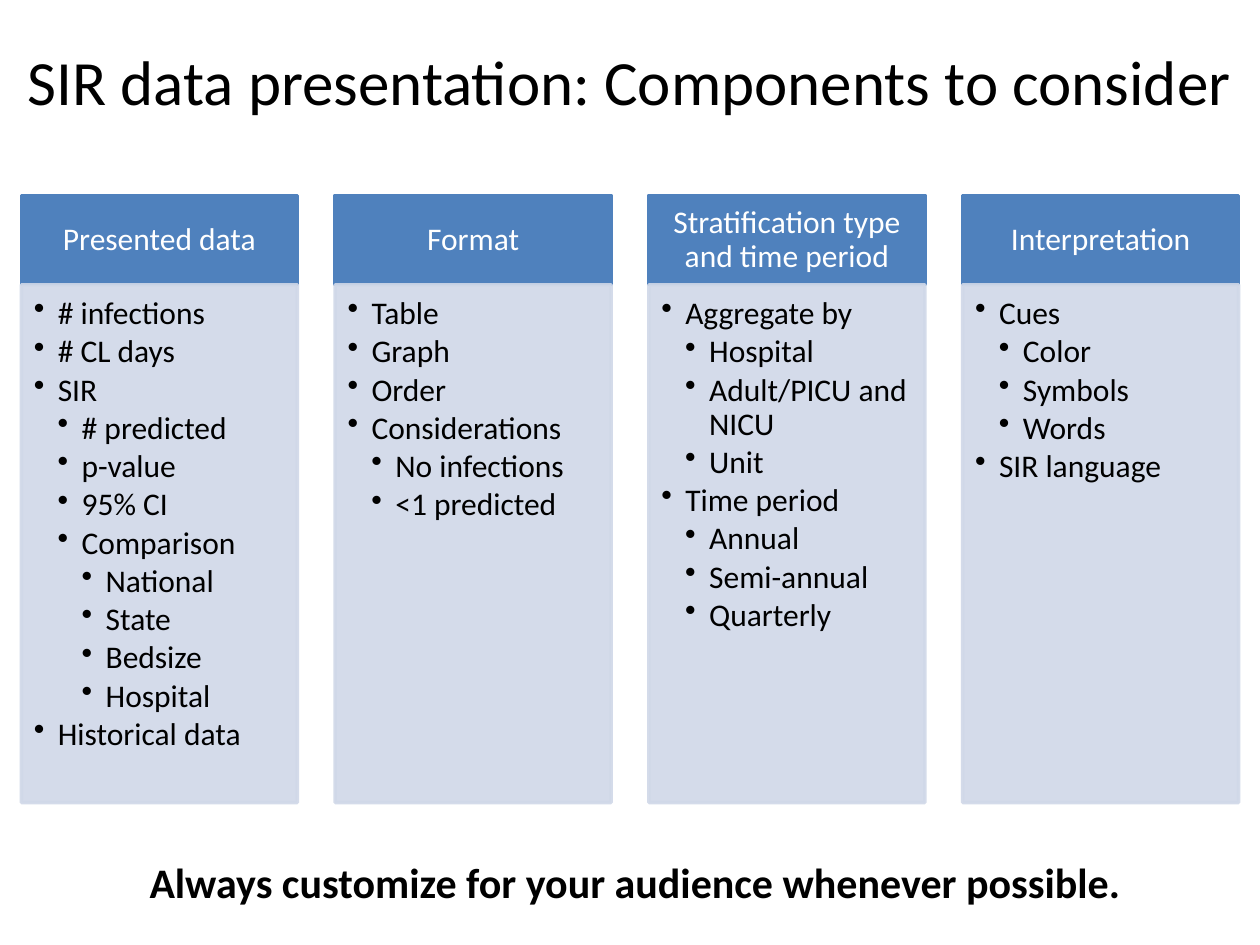
"""Build a slide that lists the components of an SIR data presentation."""
from lxml import etree
from pptx import Presentation
from pptx import util as u
from pptx.dml.color import RGBColor
from pptx.enum import shapes, text
from pptx.oxml.ns import qn

COLORS = {"header": "4F81BD", "body": "D0D8E8", "dark": "000000", "light": "FFFFFF"}
FONT = "Calibri"
LEFT, TOP, PITCH, WIDTH = 0.17, 1.55, 2.49, 2.19
HEADER_HEIGHT, BODY_HEIGHT = 0.71, 4.11
INDENT = 0.19
COLUMNS = [
    ("Presented data", [
        (0, "# infections"), (0, "# CL days"), (0, "SIR"),
        (1, "# predicted"), (1, "p-value"), (1, "95% CI"), (1, "Comparison"),
        (2, "National"), (2, "State"), (2, "Bedsize"), (2, "Hospital"),
        (0, "Historical data")]),
    ("Format", [
        (0, "Table"), (0, "Graph"), (0, "Order"), (0, "Considerations"),
        (1, "No infections"), (1, "<1 predicted")]),
    ("Stratification type and time period", [
        (0, "Aggregate by"), (1, "Hospital"), (1, "Adult/PICU and NICU"), (1, "Unit"),
        (0, "Time period"), (1, "Annual"), (1, "Semi-annual"), (1, "Quarterly")]),
    ("Interpretation", [
        (0, "Cues"), (1, "Color"), (1, "Symbols"), (1, "Words"),
        (0, "SIR language")]),
]


def write(paragraph, words, size=18, color="dark", bold=False,
          align=text.PP_ALIGN.CENTER, line_spacing=None, space_after=None):
    """Put formatted words into a paragraph."""
    run = paragraph.add_run()
    run.text = words
    run.font.name, run.font.size, run.font.bold = FONT, u.Pt(size), bold
    run.font.color.rgb = RGBColor.from_string(COLORS[color])
    paragraph.alignment = align
    if line_spacing:
        paragraph.line_spacing = line_spacing
    if space_after is not None:
        paragraph.space_after = u.Pt(space_after)


def set_bullet(paragraph, depth):
    """Give a paragraph a hanging bullet at the given depth."""
    paragraph.level = depth + 1
    properties = paragraph._p.get_or_add_pPr()
    properties.set("marL", str(u.Inches(INDENT * (depth + 1))))
    properties.set("indent", str(u.Inches(-INDENT)))
    etree.SubElement(properties, qn("a:buChar"), char="•")


def set_frame(frame, anchor, margins):
    """Set wrapping, anchor and margins (left, top, right, bottom)."""
    frame.word_wrap = True
    frame.auto_size = text.MSO_AUTO_SIZE.NONE
    frame.vertical_anchor = anchor
    (frame.margin_left, frame.margin_top,
     frame.margin_right, frame.margin_bottom) = map(u.Inches, margins)


def add_box(slide, left, top, height, color, opacity=None):
    """Add a column rectangle with matching fill and line."""
    shape = slide.shapes.add_shape(
        shapes.MSO_SHAPE.RECTANGLE, *map(u.Inches, (left, top, WIDTH, height)))
    shape.shadow.inherit = False
    shape.line.width = u.Pt(2)
    for fill in (shape.fill, shape.line.fill):
        fill.solid()
        fill.fore_color.rgb = RGBColor.from_string(COLORS[color])
    if opacity:
        for color_element in shape._element.spPr.iter(qn("a:srgbClr")):
            etree.SubElement(color_element, qn("a:alpha"), val=str(opacity * 1000))
    return shape


def add_column(slide, index, heading, items):
    """Add a heading box above a box of nested bullets."""
    left = LEFT + index * PITCH
    header = add_box(slide, left, TOP, HEADER_HEIGHT, "header").text_frame
    set_frame(header, text.MSO_ANCHOR.MIDDLE, (0.14, 0.08, 0.14, 0.08))
    write(header.paragraphs[0], heading, color="light", line_spacing=0.9)

    body = add_box(slide, left, TOP + HEADER_HEIGHT, BODY_HEIGHT, "body", 90).text_frame
    set_frame(body, text.MSO_ANCHOR.TOP, (0.1, 0.1, 0.14, 0.16))
    for number, (depth, words) in enumerate(items):
        paragraph = body.add_paragraph() if number else body.paragraphs[0]
        write(paragraph, words, align=text.PP_ALIGN.LEFT, line_spacing=0.9, space_after=2.4)
        set_bullet(paragraph, depth)


def add_title(slide, words):
    """Place and format the title."""
    title = slide.shapes.title
    title.left, title.top, title.width, title.height = map(u.Inches, (0.08, 0.29, 9.83, 0.71))
    set_frame(title.text_frame, text.MSO_ANCHOR.TOP, (0.1, 0.05, 0.1, 0.05))
    write(title.text_frame.paragraphs[0], words, size=36)


def add_message(slide, words):
    """Add the closing message below the columns."""
    box = slide.shapes.add_textbox(*map(u.Inches, (1, 6.75, 8.08, 0.5)))
    set_frame(box.text_frame, text.MSO_ANCHOR.TOP, (0.1, 0.05, 0.1, 0.05))
    write(box.text_frame.paragraphs[0], words, size=24, bold=True)


def main():
    """Build and save the presentation."""
    presentation = Presentation()
    presentation.slide_width, presentation.slide_height = u.Inches(10), u.Inches(7.5)
    slide = presentation.slides.add_slide(presentation.slide_layouts[5])
    for index, (heading, items) in enumerate(COLUMNS):
        add_column(slide, index, heading, items)
    add_title(slide, "SIR data presentation: Components to consider")
    add_message(slide, "Always customize for your audience whenever possible.")
    presentation.save("out.pptx")


if __name__ == "__main__":
    main()
